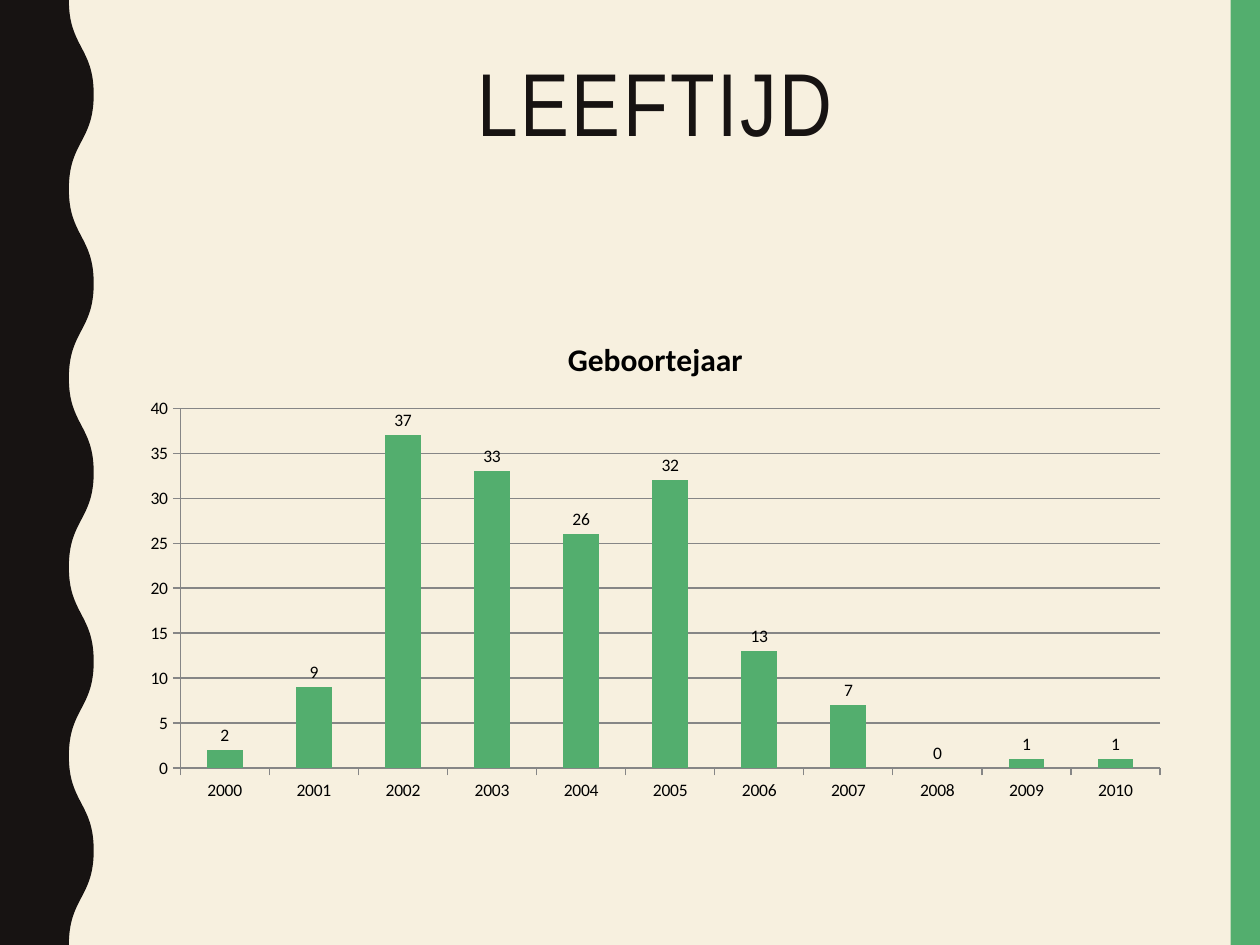
import itertools

import lxml.etree
import pptx
import pptx.chart.data
import pptx.dml.color
import pptx.enum.chart
import pptx.enum.shapes
import pptx.enum.text
import pptx.oxml.ns
import pptx.util

Cm = pptx.util.Cm
Pt = pptx.util.Pt
RGBColor = pptx.dml.color.RGBColor
qn = pptx.oxml.ns.qn

CREAM = RGBColor(0xF7, 0xF0, 0xDF)
GREEN = RGBColor(0x53, 0xAE, 0x6E)
DARK = RGBColor(0x17, 0x13, 0x12)
BLACK = RGBColor(0, 0, 0)
GREY = RGBColor(0x86, 0x86, 0x86)

WIDTH, HEIGHT = 25.4, 19.05
BIRTHS = {"2000": 2, "2001": 9, "2002": 37, "2003": 33, "2004": 26, "2005": 32,
          "2006": 13, "2007": 7, "2008": 0, "2009": 1, "2010": 1}


def apply_format(target, values):
    for name, value in values.items():
        setattr(target, name, value)


def bend_slanted_lines(shape):
    """Turn every slanted segment of a freeform into an S-shaped cubic curve."""
    points = list(shape._element.iter(qn("a:pt")))
    corners = [(int(point.get("x")), int(point.get("y"))) for point in points]
    for point, (start, end) in zip(points[1:], itertools.pairwise(corners)):
        if start[0] == end[0] or start[1] == end[1]:
            continue
        segment = point.getparent()
        middle = (start[1] + end[1]) // 2
        curve = lxml.etree.Element(qn("a:cubicBezTo"))
        for x, y in ((start[0], middle), (end[0], middle), end):
            lxml.etree.SubElement(curve, qn("a:pt"), x=str(x), y=str(y))
        segment.getparent().replace(segment, curve)


class SlideBuilder:
    title_font = {"name": "Arial Narrow", "size": Pt(51), "bold": False}
    chart_font = {"name": "Calibri", "size": Pt(10)}
    chart_title_font = {"name": "Calibri", "size": Pt(18), "bold": True}

    def __init__(self, presentation):
        self.slide = presentation.slides.add_slide(presentation.slide_layouts[5])
        self.slide.background.fill.solid()
        self.slide.background.fill.fore_color.rgb = CREAM

    def paint(self, shape, color):
        shape.shadow.inherit = False
        shape.fill.solid()
        shape.fill.fore_color.rgb = color
        shape.line.fill.background()

    def band(self, left, top, width, height, color):
        shape = self.slide.shapes.add_shape(
            pptx.enum.shapes.MSO_SHAPE.RECTANGLE, Cm(left), Cm(top), Cm(width), Cm(height))
        self.paint(shape, color)

    def wavy_band(self, inner, outer, half_waves, color):
        """Band along the left edge whose right side swings between two distances."""
        wave = [(Cm(outer if index % 2 else inner), Cm(HEIGHT * index / half_waves))
                for index in range(half_waves + 1)]
        builder = self.slide.shapes.build_freeform(0, 0)
        builder.add_line_segments([*wave, (0, Cm(HEIGHT))], close=True)
        shape = builder.convert_to_shape()
        bend_slanted_lines(shape)
        self.paint(shape, color)

    def title(self, text, left, top, width, height):
        shape = self.slide.shapes.title
        apply_format(shape, {"left": Cm(left), "top": Cm(top),
                             "width": Cm(width), "height": Cm(height)})
        apply_format(shape.text_frame, {
            "text": text, "word_wrap": True,
            "auto_size": pptx.enum.text.MSO_AUTO_SIZE.NONE,
            "vertical_anchor": pptx.enum.text.MSO_ANCHOR.TOP})
        paragraph = shape.text_frame.paragraphs[0]
        apply_format(paragraph, {"alignment": pptx.enum.text.PP_ALIGN.CENTER,
                                 "line_spacing": 0.9})
        run = paragraph.runs[0]
        self.style_font(run.font, self.title_font, DARK)
        run._r.get_or_add_rPr().set("spc", "150")

    def style_font(self, font, values, color):
        apply_format(font, values)
        font.color.rgb = color

    def column_chart(self, title, values, left, top, width, height):
        data = pptx.chart.data.CategoryChartData()
        data.categories = list(values)
        data.add_series("Series 1", list(values.values()))
        chart = self.slide.shapes.add_chart(
            pptx.enum.chart.XL_CHART_TYPE.COLUMN_CLUSTERED,
            Cm(left), Cm(top), Cm(width), Cm(height), data).chart
        self.style_font(chart.font, self.chart_font, BLACK)
        apply_format(chart, {"has_legend": False, "has_title": True})
        chart.chart_title.include_in_layout = False
        chart.chart_title.text_frame.text = title
        title_run = chart.chart_title.text_frame.paragraphs[0].runs[0]
        self.style_font(title_run.font, self.chart_title_font, BLACK)

        plot = chart.plots[0]
        apply_format(plot, {"gap_width": 150, "vary_by_categories": False,
                            "has_data_labels": True})
        apply_format(plot.data_labels, {
            "show_value": True,
            "position": pptx.enum.chart.XL_LABEL_POSITION.OUTSIDE_END})
        self.style_font(plot.data_labels.font, self.chart_font, BLACK)
        series = plot.series[0]
        series.invert_if_negative = False
        series.format.fill.solid()
        series.format.fill.fore_color.rgb = GREEN

        category_axis, value_axis = chart.category_axis, chart.value_axis
        apply_format(value_axis, {"minimum_scale": 0, "maximum_scale": 40,
                                  "major_unit": 5, "has_major_gridlines": True})
        for axis in (category_axis, value_axis):
            axis.major_tick_mark = pptx.enum.chart.XL_TICK_MARK.OUTSIDE
        for lines in (category_axis, value_axis, value_axis.major_gridlines):
            lines.format.line.color.rgb = GREY


def main():
    presentation = pptx.Presentation()
    apply_format(presentation, {"slide_width": Cm(WIDTH), "slide_height": Cm(HEIGHT)})
    builder = SlideBuilder(presentation)
    builder.band(24.81, 0, 0.59, HEIGHT, GREEN)
    builder.wavy_band(1.39, 1.89, 10, DARK)
    builder.title("LEEFTIJD", 2.61, 1.07, 21.2, 4.14)
    builder.column_chart("Geboortejaar", BIRTHS, 2.61, 6.35, 21.2, 9.98)
    presentation.save("out.pptx")


if __name__ == "__main__":
    main()
